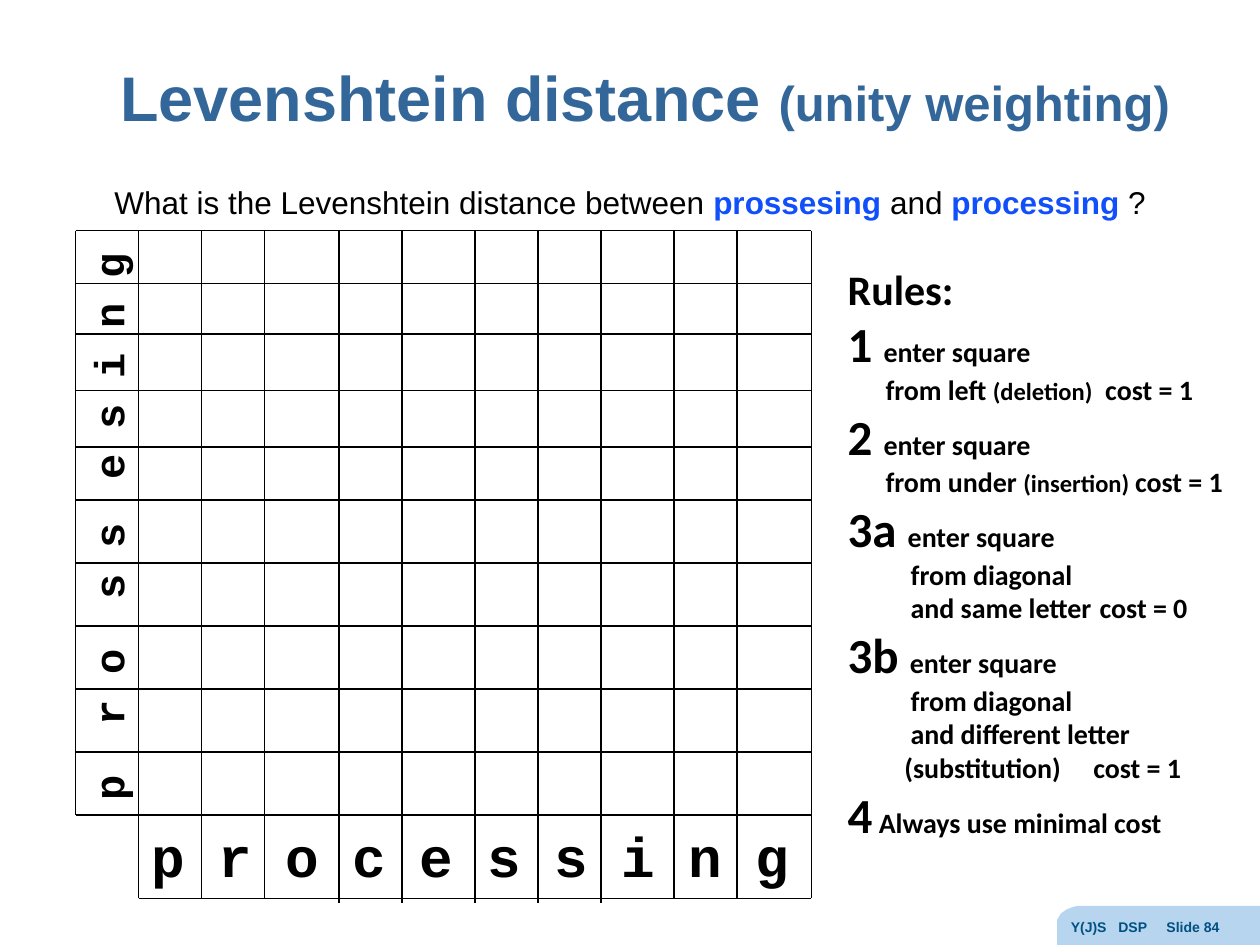
from itertools import accumulate

from lxml.etree import SubElement
from pptx import Presentation
from pptx.dml.color import RGBColor
from pptx.enum.shapes import MSO_CONNECTOR
from pptx.enum.text import MSO_ANCHOR, PP_ALIGN
from pptx.oxml.ns import qn
from pptx.util import Inches, Pt

BLACK, TITLE_BLUE, WORD_BLUE = "000000", "336699", "114FFB"
FOOTER_FILL, FOOTER_TEXT = "B7D5EF", "005081"


def color(value):
    return RGBColor.from_string(value)


def add_run(paragraph, text, size, font="Arial", fill=BLACK, bold=True):
    run = paragraph.add_run()
    run.text = text
    run.font.size = Pt(size)
    run.font.name = font
    run.font.bold = bold
    run.font.color.rgb = color(fill)


def add_text_box(slide, left, top, width, height):
    shape = slide.shapes.add_textbox(
        Inches(left), Inches(top), Inches(width), Inches(height))
    shape.text_frame.word_wrap = True
    return shape


def add_line(slide, x1, y1, x2, y2):
    line = slide.shapes.add_connector(
        MSO_CONNECTOR.STRAIGHT, Inches(x1), Inches(y1), Inches(x2), Inches(y2))
    line.line.color.rgb = color(BLACK)
    line.line.width = Pt(1)
    SubElement(line._element.spPr, qn("a:effectLst"))


def add_title(slide, left, top, width, height):
    frame = add_text_box(slide, left, top, width, height).text_frame
    frame.vertical_anchor = MSO_ANCHOR.MIDDLE
    paragraph = frame.paragraphs[0]
    paragraph.alignment = PP_ALIGN.CENTER
    paragraph.line_spacing = 0.9
    add_run(paragraph, "Levenshtein distance ", 36, fill=TITLE_BLUE)
    add_run(paragraph, "(unity weighting)", 28, fill=TITLE_BLUE)


def add_question(slide, left, top, width, height):
    paragraph = add_text_box(slide, left, top, width, height).text_frame.paragraphs[0]
    paragraph.space_before = Pt(6)
    for text, is_word in [
        ("What is the Levenshtein distance between ", False),
        ("prossesing", True),
        (" and ", False),
        ("processing ", True),
        ("?", False),
    ]:
        add_run(paragraph, text, 18, fill=WORD_BLUE if is_word else BLACK, bold=is_word)


def add_grid(slide, left, top):
    # Cell edges, starting at the column that holds the vertical word
    label_width, label_height = 0.5, 0.66
    columns = [0.5, 0.5, 0.59, 0.5, 0.58, 0.5, 0.5, 0.58, 0.5, 0.59]
    rows = [0.42, 0.4, 0.45, 0.45, 0.42, 0.5, 0.5, 0.5, 0.5, 0.5]
    xs = list(accumulate(columns, initial=left + label_width))
    ys = list(accumulate(rows, initial=top))
    right, bottom = xs[-1], ys[-1]
    base = bottom + label_height

    # Grid lines; the middle columns run slightly past the base
    add_line(slide, left, top, left, bottom)
    for index, x in enumerate(xs):
        add_line(slide, x, top, x, base + (0.04 if 3 <= index <= 7 else 0))
    for y in ys:
        add_line(slide, left, y, right, y)
    add_line(slide, xs[0], base, right, base)

    # Word along the bottom
    word = add_text_box(slide, xs[0], bottom, 5.75, 0.64)
    paragraph = word.text_frame.paragraphs[0]
    paragraph.space_before = Pt(7)
    add_run(paragraph, "p r o c e s s i n g", 32, "Courier New")

    # Word up the left side
    word = add_text_box(slide, left - 2.13, top + 1.99, 4.77, 0.5)
    word.rotation = 270
    paragraph = word.text_frame.paragraphs[0]
    paragraph.space_before = Pt(5)
    for text, size in [("p  r o  s s ", 24), (" ", 18), ("e s i n g", 24)]:
        add_run(paragraph, text, size, "Courier New")


def add_rules(slide, left, top, width, height):
    # Each rule line: left indent in inches, then its runs
    enter = ("enter square", 16)
    lines = [
        (0, [("Rules:", 24)]),
        (0, [("1 ", 28), enter]),
        (0.3, [("from left ", 16), ("(deletion)", 14), ("  cost = 1", 16)]),
        (0, [("2 ", 28), enter]),
        (0.3, [("from under ", 16), ("(insertion) ", 14), ("cost = 1", 16)]),
        (0, [("3a ", 28), enter]),
        (0.5, [("from diagonal", 16)]),
        (0.5, [("and same letter\tcost = 0", 16)]),
        (0, [("3b ", 28), enter]),
        (0.5, [("from diagonal", 16)]),
        (0.5, [("and different letter", 16)]),
        (0.45, [("(substitution)\tcost = 1", 16)]),
        (0, [("4", 28), (" Always use minimal cost", 16)]),
    ]
    frame = add_text_box(slide, left, top, width, height).text_frame
    for index, (indent, runs) in enumerate(lines):
        paragraph = frame.add_paragraph() if index else frame.paragraphs[0]
        properties = paragraph._p.get_or_add_pPr()
        properties.set("marL", str(Inches(indent)))
        properties.set("indent", "0")
        if any("\t" in text for text, _ in runs):
            tabs = SubElement(properties, qn("a:tabLst"))
            SubElement(tabs, qn("a:tab"), pos=str(Inches(2)), algn="l")
        for text, size in runs:
            add_run(paragraph, text, size, "Calibri")


def add_footer(slide, left, top, width, height):
    # Tab with a rounded upper left corner
    right, bottom = left + width, top + height
    corner = [(0, 0.15), (0, 0.11), (0.03, 0.06), (0.07, 0.03), (0.12, 0.01), (0.16, 0)]
    points = [(right, bottom), (left, bottom)]
    points += [(left + x, top + y) for x, y in corner]
    builder = slide.shapes.build_freeform(Inches(right), Inches(top), scale=1.0)
    builder.add_line_segments([(Inches(x), Inches(y)) for x, y in points], close=True)
    shape = builder.convert_to_shape()
    shape.shadow.inherit = False
    shape.fill.solid()
    shape.fill.fore_color.rgb = color(FOOTER_FILL)
    shape.line.fill.background()

    label = add_text_box(slide, left + 0.01, top + 0.05, width - 0.01, height - 0.05)
    add_run(label.text_frame.paragraphs[0], "Y(J)S   DSP     Slide 84", 8, fill=FOOTER_TEXT)


def main():
    presentation = Presentation()
    presentation.slide_width = Inches(10)
    presentation.slide_height = Inches(7.5)
    slide = presentation.slides.add_slide(presentation.slide_layouts[6])
    add_footer(slide, 8.39, 7.19, 1.61, 0.31)
    add_title(slide, 0.81, 0.18, 8.62, 1.25)
    add_question(slide, 0.81, 1.4, 8.69, 0.43)
    add_grid(slide, 0.6, 1.83)
    add_rules(slide, 6.63, 2.04, 3.37, 4.75)
    presentation.save("out.pptx")


if __name__ == "__main__":
    main()
